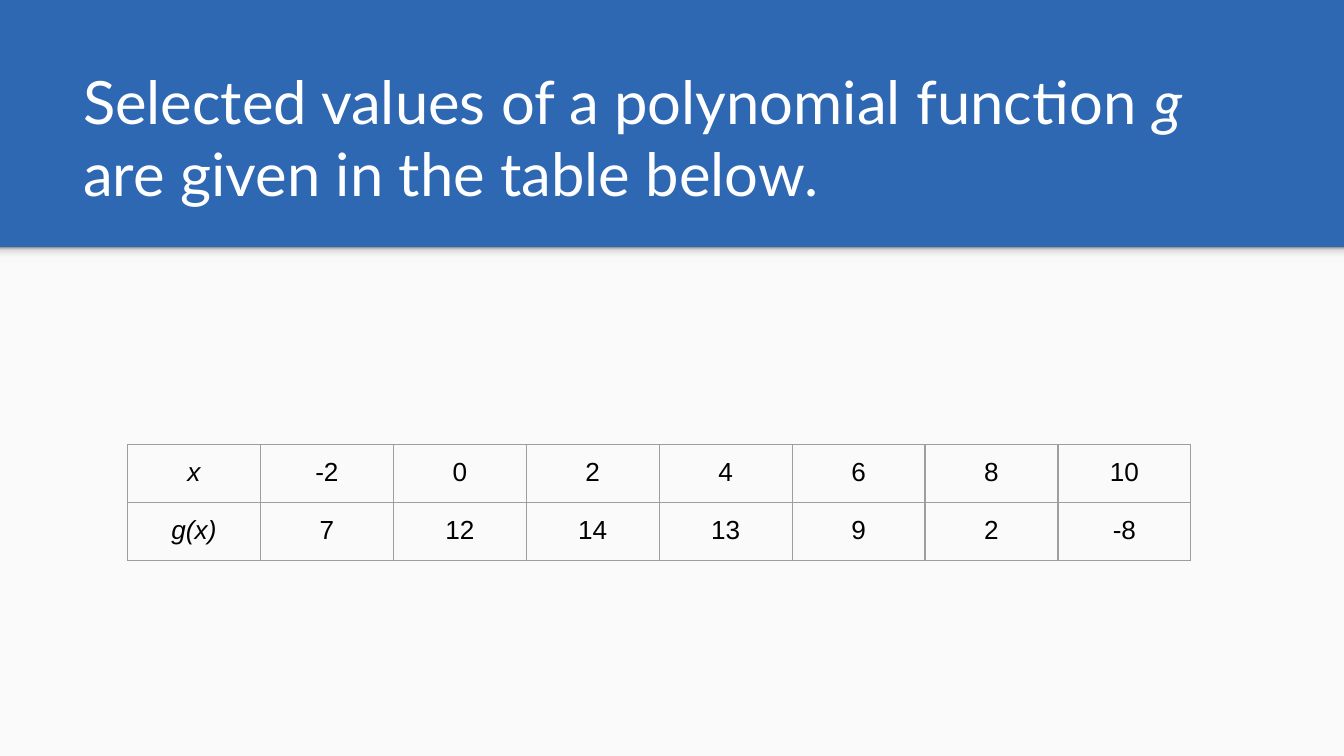
from dataclasses import dataclass

from lxml import etree
from pptx import Presentation
from pptx.dml.color import RGBColor
from pptx.enum import shapes, text
from pptx.oxml import ns
from pptx.util import Cm, Pt


@dataclass(frozen=True)
class Theme:
    blue: str = "2E67B2"
    paper: str = "FAFAFA"
    white: str = "FFFFFF"
    black: str = "000000"
    border: str = "9E9E9E"
    shade: tuple = ((0, "F9F9F9"), (36, "F9F9F9"), (80, "DEDEDE"), (100, "999999"))
    title_font: str = "Lato"
    table_font: str = "Arial"
    title_size: int = 32
    table_size: int = 14
    border_width: float = 0.75
    inset: float = 0.25


@dataclass(frozen=True)
class Box:
    left: float
    top: float
    width: float
    height: float

    def lengths(self) -> tuple:
        return Cm(self.left), Cm(self.top), Cm(self.width), Cm(self.height)


@dataclass(frozen=True)
class ValueRow:
    label: str
    values: tuple


THEME = Theme()
SLIDE_WIDTH, SLIDE_HEIGHT = 25.4, 14.29
BAND_HEIGHT = 4.67
BODY = Box(0, BAND_HEIGHT, SLIDE_WIDTH, SLIDE_HEIGHT - BAND_HEIGHT)
BAND_SHADE = Box(0, BAND_HEIGHT, SLIDE_WIDTH, 0.3)
TITLE = Box(1.32, 2.06, 22.83, 2.13)
TABLE = Box(2.41, 8.4, 20.1, 2.14)
ROWS = (
    ValueRow("x", (-2, 0, 2, 4, 6, 8, 10)),
    ValueRow("g(x)", (7, 12, 14, 13, 9, 2, -8)),
)


def add_run(paragraph, words: str, font: str, size: int, color: str, italic: bool = False) -> None:
    run = paragraph.add_run()
    run.text = words
    run.font.name = font
    run.font.size = Pt(size)
    run.font.italic = italic
    run.font.color.rgb = RGBColor.from_string(color)


def set_margins(holder) -> None:
    """Give a text frame or a table cell the same inset on all sides."""
    for side in ("left", "top", "right", "bottom"):
        setattr(holder, f"margin_{side}", Cm(THEME.inset))


def add_rectangle(slide, box: Box):
    shape = slide.shapes.add_shape(shapes.MSO_SHAPE.RECTANGLE, *box.lengths())
    shape.shadow.inherit = False
    shape.line.fill.background()
    return shape


def add_body(slide) -> None:
    shape = add_rectangle(slide, BODY)
    shape.fill.solid()
    shape.fill.fore_color.rgb = RGBColor.from_string(THEME.paper)


def add_band_shade(slide) -> None:
    """Draw the soft edge below the title band, darkest at its top."""
    shape = add_rectangle(slide, BAND_SHADE)
    shape.fill.gradient()
    shape.fill.gradient_angle = 90
    stops = shape.element.spPr.find(".//" + ns.qn("a:gsLst"))
    for stop in list(stops):
        stops.remove(stop)
    for percent, color in THEME.shade:
        stop = etree.SubElement(stops, ns.qn("a:gs"), pos=str(percent * 1000))
        etree.SubElement(stop, ns.qn("a:srgbClr"), val=color)


def add_title(slide) -> None:
    frame = slide.shapes.add_textbox(*TITLE.lengths()).text_frame
    frame.word_wrap = True
    frame.vertical_anchor = text.MSO_ANCHOR.BOTTOM
    set_margins(frame)
    for words, italic in (
        ("Selected values of a polynomial function ", False),
        ("g", True),
        (" are given in the table below.", False),
    ):
        add_run(frame.paragraphs[0], words, THEME.title_font, THEME.title_size, THEME.white, italic)


def set_borders(cell) -> None:
    properties = cell._tc.get_or_add_tcPr()
    for position, side in enumerate(("lnL", "lnR", "lnT", "lnB")):
        line = etree.Element(ns.qn(f"a:{side}"), w=str(Pt(THEME.border_width)))
        fill = etree.SubElement(line, ns.qn("a:solidFill"))
        etree.SubElement(fill, ns.qn("a:srgbClr"), val=THEME.border)
        properties.insert(position, line)


def fill_cell(cell, words: str, italic: bool) -> None:
    set_margins(cell)
    cell.fill.background()
    set_borders(cell)
    paragraph = cell.text_frame.paragraphs[0]
    paragraph.alignment = text.PP_ALIGN.CENTER
    add_run(paragraph, words, THEME.table_font, THEME.table_size, THEME.black, italic)


def add_value_table(slide, rows: tuple) -> None:
    column_count = 1 + len(rows[0].values)
    table = slide.shapes.add_table(len(rows), column_count, *TABLE.lengths()).table
    table.first_row = False
    table.horz_banding = False
    for row_index, row in enumerate(rows):
        for column_index, entry in enumerate((row.label, *row.values)):
            fill_cell(table.cell(row_index, column_index), str(entry), column_index == 0)


def main() -> None:
    presentation = Presentation()
    presentation.slide_width = Cm(SLIDE_WIDTH)
    presentation.slide_height = Cm(SLIDE_HEIGHT)
    slide = presentation.slides.add_slide(presentation.slide_layouts[6])
    slide.background.fill.solid()
    slide.background.fill.fore_color.rgb = RGBColor.from_string(THEME.blue)
    add_body(slide)
    add_band_shade(slide)
    add_title(slide)
    add_value_table(slide, ROWS)
    presentation.save("out.pptx")


if __name__ == "__main__":
    main()
